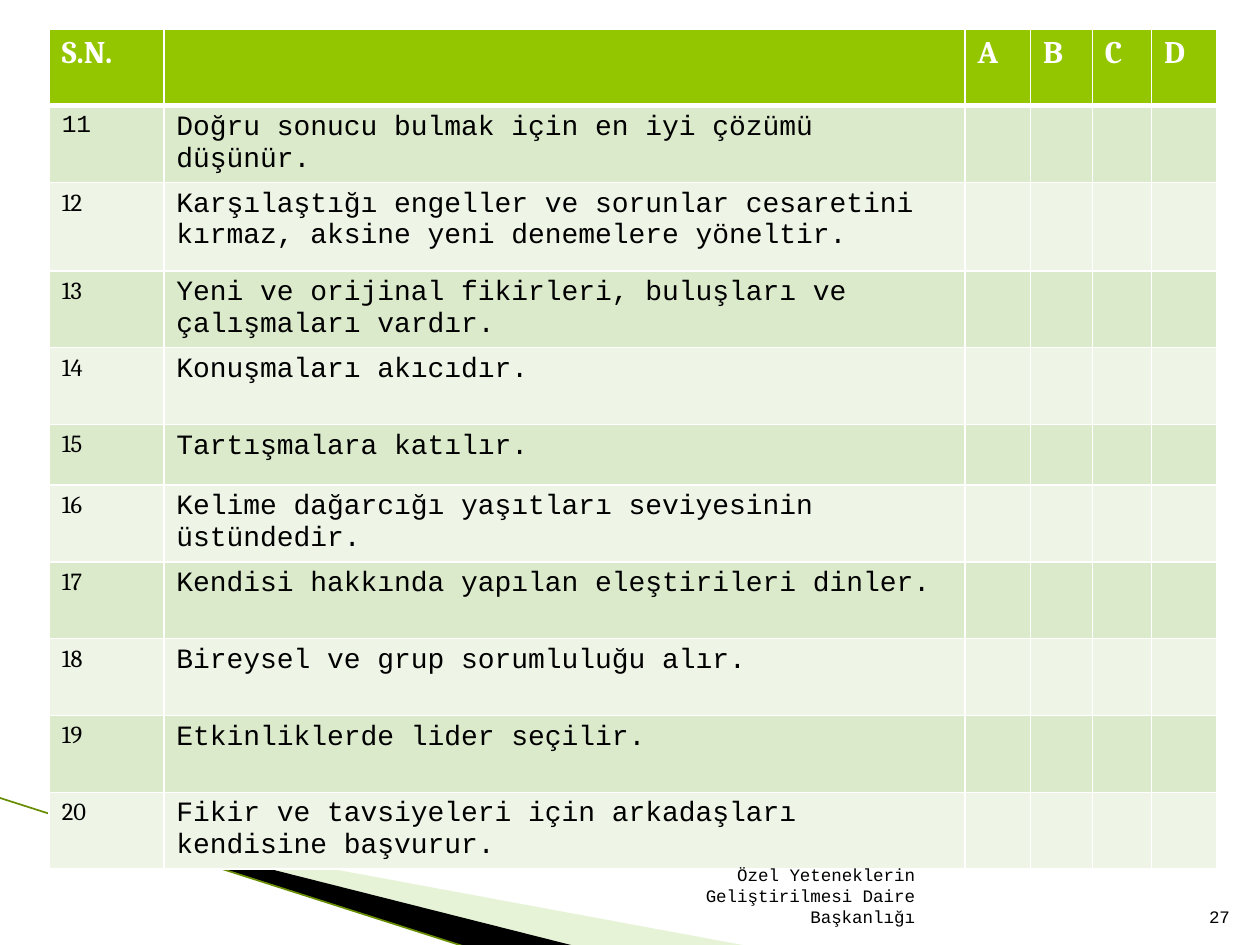
from pptx import Presentation
from pptx.dml.color import RGBColor
from pptx.enum.shapes import MSO_CONNECTOR
from pptx.enum.text import MSO_ANCHOR, PP_ALIGN
from pptx.oxml.ns import qn
from pptx.util import Inches, Pt
from lxml.etree import SubElement

WHITE = RGBColor(0xFF, 0xFF, 0xFF)
BLACK = RGBColor(0, 0, 0)
HEADER_GREEN = RGBColor(0x94, 0xC6, 0x00)
BAND_DARK = RGBColor(0xDC, 0xEA, 0xCC)
BAND_LIGHT = RGBColor(0xEE, 0xF5, 0xE7)
WEDGE_GREEN = RGBColor(0xC3, 0xE1, 0x9D)
LINE_OLIVE = RGBColor(0x68, 0x8C, 0x00)
SERIF, MONO = "Cambria", "Courier New"

HEADERS = ["S.N.", "", "A", "B", "C", "D"]
FIRST_NUMBER = 11
STATEMENTS = [
    "Doğru sonucu bulmak için en iyi çözümü düşünür.",
    "Karşılaştığı engeller ve sorunlar cesaretini kırmaz, aksine yeni denemelere yöneltir.",
    "Yeni ve orijinal fikirleri, buluşları ve çalışmaları vardır.",
    "Konuşmaları akıcıdır.",
    "Tartışmalara katılır.",
    "Kelime dağarcığı yaşıtları seviyesinin üstündedir.",
    "Kendisi hakkında yapılan eleştirileri dinler.",
    "Bireysel ve grup sorumluluğu alır.",
    "Etkinliklerde lider seçilir.",
    "Fikir ve tavsiyeleri için arkadaşları kendisine başvurur.",
]
COL_WIDTHS = [0.91, 6.36, 0.52, 0.49, 0.47, 0.52]
ROW_HEIGHT = 0.61
ODD_HEIGHTS = {2: 0.7, 5: 0.48}

# points, colour, opacity in percent
WEDGES = [
    ([(0.55, 6.51), (5.95, 7.51), (4.56, 7.51), (0.55, 6.5)], WEDGE_GREEN, 40),
    ([(0.53, 6.49), (4.57, 7.51), (3.72, 7.52), (0.54, 6.5)], BLACK, 100),
]
# text, left, width
FOOTERS = [
    ("Özel Yeteneklerin Geliştirilmesi Daire Başkanlığı", 4.79, 2.57),
    ("27", 9.46, 0.4),
]


def style(p, font, size, color, bold=False):
    p.font.name, p.font.size, p.font.bold = font, Pt(size), bold
    p.font.color.rgb = color


def add_wedge(slide, points, color, opacity):
    start, *others = [(Inches(x), Inches(y)) for x, y in points]
    builder = slide.shapes.build_freeform(*start)
    builder.add_line_segments(others, close=True)
    sp = builder.convert_to_shape()
    sp.shadow.inherit = False
    sp.fill.solid()
    sp.fill.fore_color.rgb = color
    sp.line.fill.background()
    if opacity < 100:
        clr = sp._element.spPr.find(qn("a:solidFill"))[0]
        SubElement(clr, qn("a:alpha"), val=str(opacity * 1000))


def add_edge_line(slide):
    line = slide.shapes.add_connector(
        MSO_CONNECTOR.STRAIGHT, Inches(-0.01), Inches(6.33), Inches(3.71), Inches(7.52))
    line.line.color.rgb = LINE_OLIVE
    line.line.width = Pt(0.95)
    SubElement(line._element.spPr, qn("a:effectLst"))


def set_borders(cell, widths):
    tcPr = cell._tc.get_or_add_tcPr()
    for side, width in widths.items():
        ln = SubElement(tcPr, qn(f"a:ln{side}"), w=str(Pt(width)))
        fill = SubElement(ln, qn("a:solidFill"))
        SubElement(fill, qn("a:srgbClr"), val=str(WHITE))


def add_checklist(slide):
    rows = [HEADERS] + [[str(n), text, "", "", "", ""]
                        for n, text in enumerate(STATEMENTS, FIRST_NUMBER)]
    heights = [ODD_HEIGHTS.get(i, ROW_HEIGHT) for i in range(len(rows))]
    table = slide.shapes.add_table(
        len(rows), len(HEADERS), Inches(0.39), Inches(0.23),
        Inches(sum(COL_WIDTHS)), Inches(sum(heights))).table
    for column, width in zip(table.columns, COL_WIDTHS):
        column.width = Inches(width)
    for r, (row, height) in enumerate(zip(rows, heights)):
        table.rows[r].height = Inches(height)
        band = HEADER_GREEN if r == 0 else BAND_DARK if r % 2 else BAND_LIGHT
        for c, text in enumerate(row):
            cell = table.cell(r, c)
            set_borders(cell, {"L": 1, "R": 1, "T": 3 if r == 1 else 1, "B": 3 if r == 0 else 1})
            cell.fill.solid()
            cell.fill.fore_color.rgb = band
            if not text:
                continue
            cell.text = text
            p = cell.text_frame.paragraphs[0]
            if r == 0:
                style(p, SERIF, 18, WHITE, bold=True)
            elif c == 0:
                style(p, MONO if r == 1 else SERIF, 14, BLACK)
            else:
                style(p, MONO, 16, BLACK)


def add_footer(slide, text, left, width):
    box = slide.shapes.add_textbox(Inches(left), Inches(7.01), Inches(width), Inches(0.4))
    tf = box.text_frame
    tf.word_wrap = True
    tf.vertical_anchor = MSO_ANCHOR.BOTTOM
    p = tf.paragraphs[0]
    p.text = text
    p.alignment = PP_ALIGN.RIGHT
    style(p, MONO, 10, BLACK)


def main():
    prs = Presentation()
    prs.slide_width, prs.slide_height = Inches(10), Inches(7.5)
    slide = prs.slides.add_slide(prs.slide_layouts[6])
    for wedge in WEDGES:
        add_wedge(slide, *wedge)
    add_edge_line(slide)
    add_checklist(slide)
    for footer in FOOTERS:
        add_footer(slide, *footer)
    prs.save("out.pptx")


if __name__ == "__main__":
    main()
